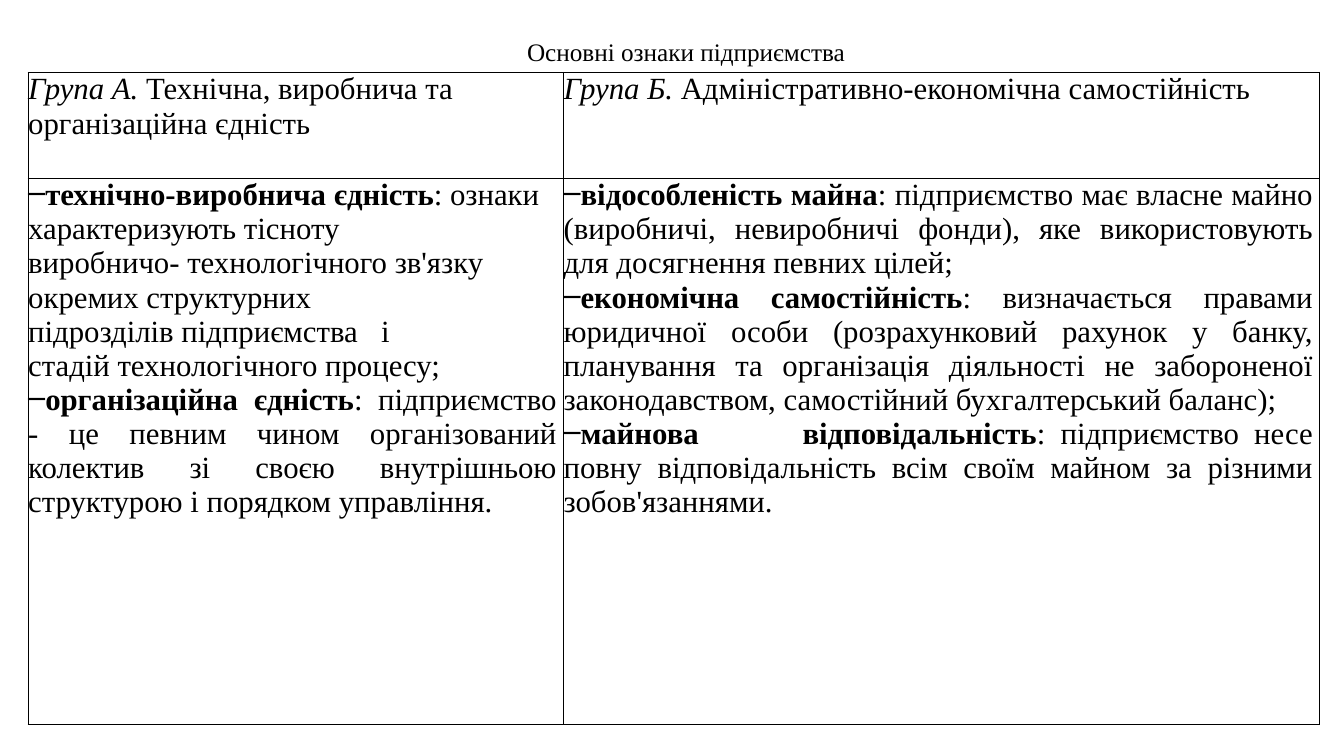
from lxml.etree import SubElement
from pptx import Presentation
from pptx.dml.color import RGBColor
from pptx.enum.text import MSO_ANCHOR, MSO_AUTO_SIZE, PP_ALIGN
from pptx.oxml.ns import qn
from pptx.util import Pt

PX = 9144
BLACK = RGBColor(0x00, 0x00, 0x00)
FONT = "Times New Roman"
LEFT, JUSTIFY = PP_ALIGN.LEFT, PP_ALIGN.JUSTIFY
COLUMN_WIDTHS = (531, 750)
ROW_HEIGHTS = (105, 542)

GROUPS = (
    ("Група А. ", "Технічна, виробнича та організаційна єдність", -21),
    ("Група Б. ", "Адміністративно-економічна самостійність", -102),
)
FEATURES = (
    (
        ("технічно-виробнича єдність",
         ": ознаки характеризують тісноту\t\tвиробничо- технологічного "
         "зв'язку окремих структурних\t\t\tпідрозділів підприємства\tі"
         "\t\t\tстадій технологічного процесу;",
         LEFT, (59, 163, 179, 182, 220)),
        ("організаційна єдність",
         ": підприємство - це певним чином організований колектив зі своєю "
         "внутрішньою структурою і порядком управління.",
         JUSTIFY, (59,)),
    ),
    (
        ("відособленість майна",
         ": підприємство має власне майно (виробничі, невиробничі фонди), "
         "яке використовують для досягнення певних цілей;",
         JUSTIFY, (59,)),
        ("економічна самостійність",
         ": визначається правами юридичної особи (розрахунковий рахунок у "
         "банку, планування та організація діяльності не забороненої "
         "законодавством, самостійний бухгалтерський баланс);",
         JUSTIFY, (59,)),
        ("майнова\tвідповідальність",
         ": підприємство несе повну відповідальність всім своїм майном за "
         "різними зобов'язаннями.",
         JUSTIFY, (59, 237)),
    ),
)


def px(length):
    return length * PX


def style_run(run, size, bold=False, italic=False):
    font = run.font
    font.name, font.size = FONT, Pt(size)
    font.bold, font.italic = bold, italic
    font.color.rgb = BLACK


def add_text(paragraph, text, bold=False, italic=False):
    run = paragraph.add_run()
    run.text = text
    style_run(run, 22, bold, italic)


def set_indent(paragraph, indent):
    properties = paragraph._p.get_or_add_pPr()
    properties.set("marL", "0")
    properties.set("indent", str(px(indent)))
    return properties


def set_dash_and_tabs(paragraph, tabs):
    properties = set_indent(paragraph, -38)
    SubElement(properties, qn("a:buChar"), char="–")
    tab_list = SubElement(properties, qn("a:tabLst"))
    for position in tabs:
        SubElement(tab_list, qn("a:tab"), pos=str(px(position)), algn="l")


def format_cell(cell):
    cell.margin_left = cell.margin_top = cell.margin_bottom = 0
    cell.margin_right = px(7)
    properties = cell._tc.get_or_add_tcPr()
    for side in ("a:lnL", "a:lnR", "a:lnT", "a:lnB"):
        border = SubElement(properties, qn(side), w=str(Pt(1)))
        fill = SubElement(border, qn("a:solidFill"))
        SubElement(fill, qn("a:srgbClr"), val=str(BLACK))
    cell.fill.background()


def fill_group(cell, name, description, indent):
    format_cell(cell)
    cell.margin_right = 0
    heading = cell.text_frame.paragraphs[0]
    set_indent(heading, indent)
    add_text(heading, name, italic=True)
    add_text(heading, description)


def fill_features(cell, features):
    format_cell(cell)
    frame = cell.text_frame
    for index, (term, explanation, alignment, tabs) in enumerate(features):
        feature = frame.add_paragraph() if index else frame.paragraphs[0]
        set_dash_and_tabs(feature, tabs)
        feature.alignment = alignment
        add_text(feature, term, bold=True)
        add_text(feature, explanation)


def add_title(slide, text):
    title = slide.shapes.title
    title.left, title.top, title.width, title.height = map(px, (347, 31, 667, 40))
    frame = title.text_frame
    frame.text = text
    frame.word_wrap = True
    frame.auto_size = MSO_AUTO_SIZE.SHAPE_TO_FIT_TEXT
    frame.vertical_anchor = MSO_ANCHOR.TOP
    frame.paragraphs[0].alignment = PP_ALIGN.CENTER
    style_run(frame.paragraphs[0].runs[0], 18)


def add_features_table(slide):
    table = slide.shapes.add_table(
        2, 2, px(28), px(72), px(sum(COLUMN_WIDTHS)), px(sum(ROW_HEIGHTS))
    ).table
    table.first_row = table.horz_banding = False
    for row, height in zip(table.rows, ROW_HEIGHTS):
        row.height = px(height)
    for index, width in enumerate(COLUMN_WIDTHS):
        table.columns[index].width = px(width)
        fill_group(table.cell(0, index), *GROUPS[index])
        fill_features(table.cell(1, index), FEATURES[index])


def main():
    presentation = Presentation()
    presentation.slide_width, presentation.slide_height = px(1333), px(750)
    slide = presentation.slides.add_slide(presentation.slide_layouts[5])
    add_title(slide, "Основні ознаки підприємства")
    add_features_table(slide)
    presentation.save("out.pptx")


if __name__ == "__main__":
    main()
